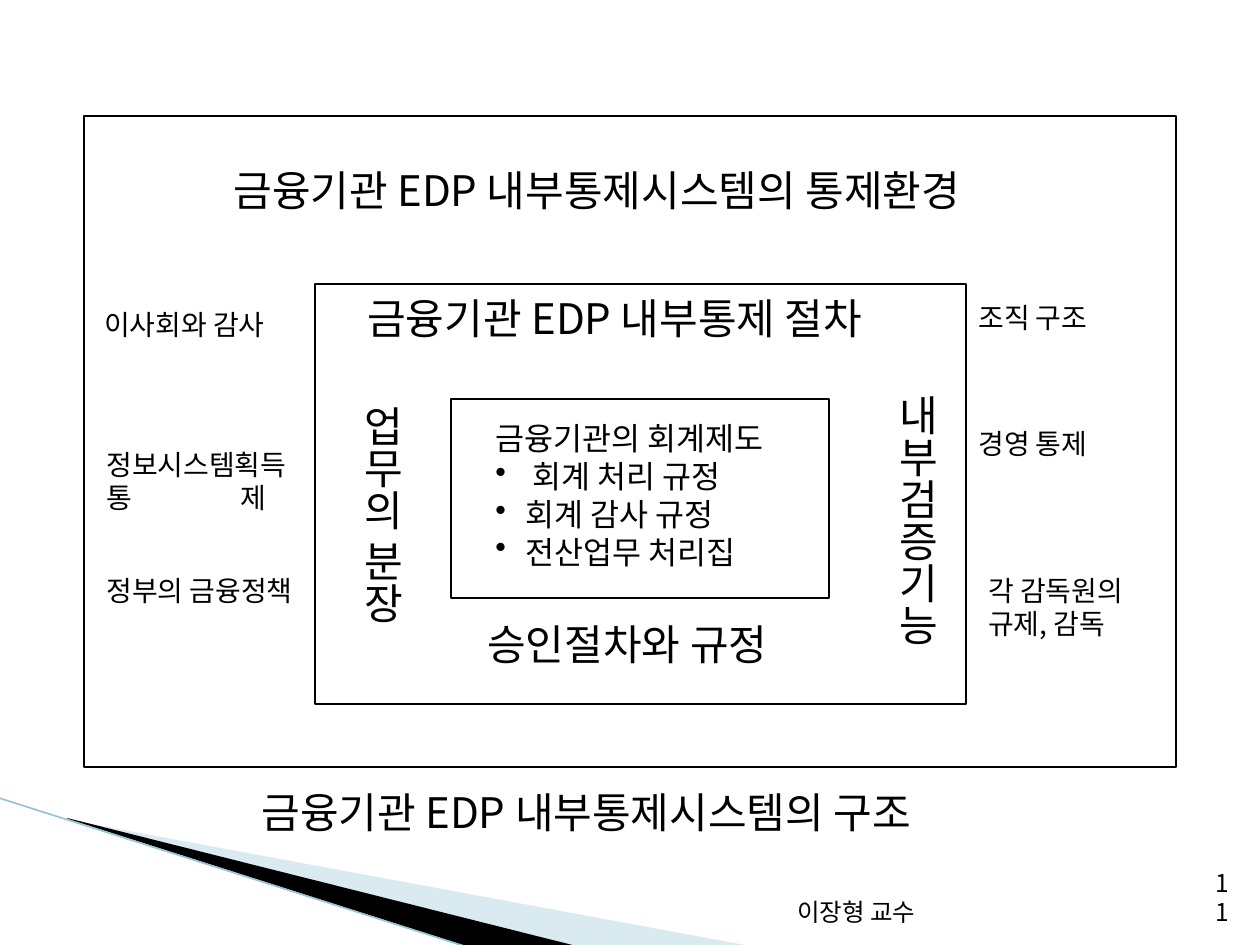
"""Build the slide on the structure of an EDP internal control system."""
import pptx
import pptx.dml.color
import pptx.enum.shapes
import pptx.enum.text
import pptx.oxml
import pptx.oxml.ns
import pptx.util
from lxml import etree

EMU_PER_PX = 914400 / 126
FONT = "Noto Sans CJK KR"
BLACK = "000000"
WHITE = "FFFFFF"

FRAMES = [(84, 116, 1092, 651), (315, 284, 651, 420), (451, 399, 378, 199)]
HEADINGS = [
    ("금융기관 EDP 내부통제시스템의 통제환경", (221, 158, 823, 63)),
    ("금융기관 EDP 내부통제 절차", (355, 286, 571, 63)),
    ("승인절차와 규정", (475, 612, 334, 63)),
    ("금융기관 EDP 내부통제시스템의 구조", (249, 780, 738, 63)),
]
VERTICAL_HEADINGS = [
    ("업무의 분장", (338, 393, 76, 237)),
    ("내부검증기능", (873, 382, 76, 265)),
]
FACTORS = [
    ("이사회와 감사", (92, 301, 203, 47)),
    ("정부의 금융정책", (94, 567, 231, 47)),
    ("경영 통제", (966, 420, 146, 47)),
    ("조직 구조", (966, 294, 146, 47)),
]
FOOTERS = [("이장형 교수", (604, 883, 324, 50)), ("11", (1192, 883, 50, 50))]


def px(length):
    """Turn pixels into EMU."""
    return pptx.util.Emu(round(length * EMU_PER_PX))


def color(value):
    """Turn a hex string into a colour."""
    return pptx.dml.color.RGBColor.from_string(value)


def add_child(parent, tag, **attributes):
    """Append a DrawingML element to a parent."""
    return etree.SubElement(parent, pptx.oxml.ns.qn(tag), attributes)


def add_frame(slide, box):
    """Draw a white rectangle with a thin black outline."""
    shape = slide.shapes.add_shape(
        pptx.enum.shapes.MSO_SHAPE.RECTANGLE, *map(px, box))
    shape.shadow.inherit = False
    shape.fill.solid()
    shape.fill.fore_color.rgb = color(WHITE)
    shape.line.color.rgb = color(BLACK)
    shape.line.width = pptx.util.Pt(0.75)


def add_wedge(slide, points, fill, opacity=100):
    """Draw a filled polygon without an outline."""
    builder = slide.shapes.build_freeform(*points[0], scale=EMU_PER_PX)
    builder.add_line_segments(points[1:], close=True)
    shape = builder.convert_to_shape()
    shape.shadow.inherit = False
    shape.fill.solid()
    shape.fill.fore_color.rgb = color(fill)
    shape.line.fill.background()
    if opacity < 100:
        fill_color = shape._element.spPr.find(
            ".//" + pptx.oxml.ns.qn("a:srgbClr"))
        add_child(fill_color, "a:alpha", val=str(opacity * 1000))


def add_edge(slide, start, end):
    """Draw the thin line along the corner wedges."""
    connector = slide.shapes.add_connector(
        pptx.enum.shapes.MSO_CONNECTOR.STRAIGHT, *map(px, start + end))
    connector.line.color.rgb = color("97C5D8")
    connector.line.width = pptx.util.Pt(0.95)
    add_child(connector._element.spPr, "a:effectLst")


def style_paragraph(paragraph, size):
    """Set the font for Latin and Korean text."""
    font = paragraph.font
    font.size = pptx.util.Pt(size)
    font.name = FONT
    font.color.rgb = color(BLACK)
    properties = paragraph._p.pPr.find(pptx.oxml.ns.qn("a:defRPr"))
    add_child(properties, "a:ea", typeface=FONT)


def add_text(slide, text, box, size, wrap=False):
    """Add a text box that grows with its text and return its frame."""
    frame = slide.shapes.add_textbox(*map(px, box)).text_frame
    frame.word_wrap = wrap
    frame.auto_size = pptx.enum.text.MSO_AUTO_SIZE.SHAPE_TO_FIT_TEXT
    frame.text = text
    for paragraph in frame.paragraphs:
        style_paragraph(paragraph, size)
    return frame


def add_vertical_text(slide, text, box):
    """Add a heading whose characters run downwards."""
    frame = add_text(slide, text, box, 24)
    frame._txBody.bodyPr.set("vert", "eaVert")


def add_tabbed_text(slide, text, box, stop):
    """Add a label whose last line is spread by a tab stop."""
    frame = add_text(slide, text, box, 16)
    properties = frame.paragraphs[-1]._p.pPr
    tabs = pptx.oxml.parse_xml(
        f'<a:tabLst {pptx.oxml.ns.nsdecls("a")}>'
        f'<a:tab pos="{px(stop)}" algn="l"/></a:tabLst>')
    properties.insert(0, tabs)


def add_bulleted_text(slide, text, box, indent):
    """Add a title line followed by bulleted lines."""
    frame = add_text(slide, text, box, 18)
    for paragraph in frame.paragraphs[1:]:
        properties = paragraph._p.pPr
        properties.set("marL", str(px(indent)))
        properties.set("indent", str(-px(indent)))
        bullet = add_child(properties, "a:buChar", char="•")
        properties.insert(0, bullet)


def add_footer(slide, text, box):
    """Add right-aligned text at the bottom of a fixed box."""
    frame = add_text(slide, text, box, 14, wrap=True)
    frame.auto_size = pptx.enum.text.MSO_AUTO_SIZE.NONE
    frame.vertical_anchor = pptx.enum.text.MSO_ANCHOR.BOTTOM
    frame.paragraphs[0].alignment = pptx.enum.text.PP_ALIGN.RIGHT


def main():
    """Build and save the slide."""
    presentation = pptx.Presentation()
    presentation.slide_width, presentation.slide_height = px(1260), px(945)
    slide = presentation.slides.add_slide(presentation.slide_layouts[6])
    add_wedge(slide, [(69, 820), (750, 946), (575, 946), (69, 819)],
              "A0CBDC", 40)
    add_wedge(slide, [(67, 818), (576, 946), (469, 947), (68, 819)], BLACK)
    add_edge(slide, (-1, 798), (467, 947))
    for box in FRAMES:
        add_frame(slide, box)
    for text, box in HEADINGS:
        add_text(slide, text, box, 24)
    for text, box in VERTICAL_HEADINGS:
        add_vertical_text(slide, text, box)
    for text, box in FACTORS:
        add_text(slide, text, box, 16)
    add_tabbed_text(slide, "정보시스템획득\n통\t제", (94, 441, 222, 81), 134)
    add_text(slide, "각 감독원의\n규제, 감독", (976, 567, 203, 81), 16, wrap=True)
    add_bulleted_text(
        slide, "금융기관의 회계제도\n 회계 처리 규정\n회계 감사 규정\n전산업무 처리집",
        (483, 413, 319, 164), 30)
    for text, box in FOOTERS:
        add_footer(slide, text, box)
    presentation.save("out.pptx")


if __name__ == "__main__":
    main()
